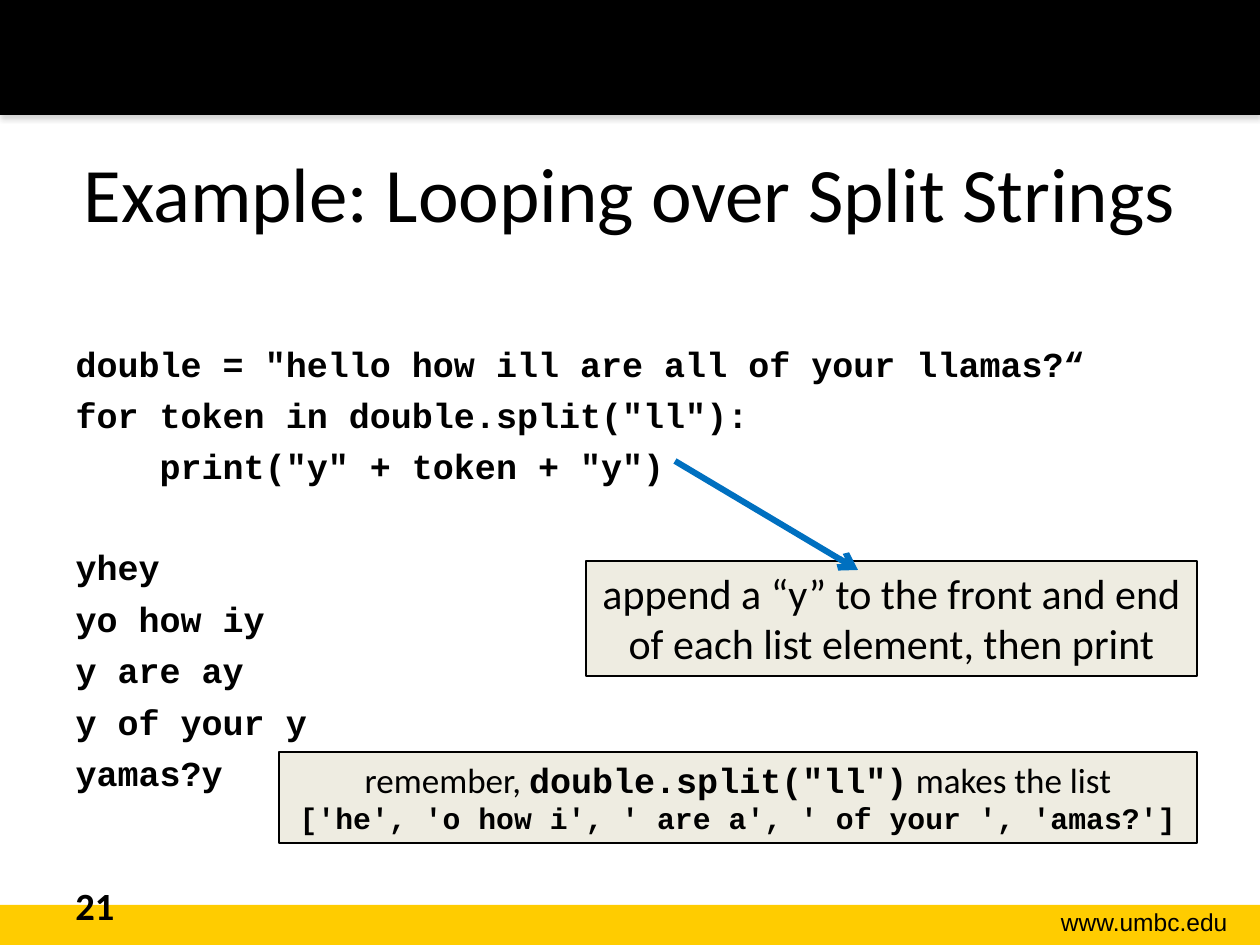
from lxml.etree import SubElement
from pptx import Presentation
from pptx.dml.color import RGBColor
from pptx.enum.shapes import MSO_CONNECTOR, MSO_SHAPE
from pptx.enum.text import MSO_ANCHOR, MSO_AUTO_SIZE, PP_ALIGN
from pptx.oxml.ns import qn
from pptx.util import Emu, Pt

BLACK = RGBColor(0x00, 0x00, 0x00)
GOLD = RGBColor(0xFF, 0xCC, 0x00)
CREAM = RGBColor(0xEE, 0xEC, 0xE1)
BLUE = RGBColor(0x00, 0x70, 0xC0)
SANS, MONO, FOOTER_FONT = "Calibri", "Courier New", "Arial"

# Content
TITLE = "Example: Looping over Split Strings"
CODE = [
    'double = "hello how ill are all of your llamas?“',
    'for token in double.split("ll"):',
    '    print("y" + token + "y")',
]
OUTPUT = ["yhey", "yo how iy", "y are ay", "y of your y", "yamas?y"]
# Each note: place in px, then paragraphs of (text, font, size, bold) runs
NOTES = [
    ((279, 752, 918, 91), [
        [("remember, ", SANS, 20, False),
         ('double.split("ll")', MONO, 20, True),
         (" makes the list", SANS, 20, False)],
        [("['he', 'o how i', ' are a', ' of your ', 'amas?']", MONO, 17, True)],
    ]),
    ((586, 561, 611, 115), [
        [("append a “y” to the front and end of each list element, then print",
          SANS, 24, False)],
    ]),
]
# Each footer: text, place in px, font, size, bold, alignment
FOOTERS = [
    ("www.umbc.edu", (989, 901, 251, 43), FOOTER_FONT, 14, False, PP_ALIGN.RIGHT),
    ("21", (63, 876, 294, 50), SANS, 22, True, PP_ALIGN.LEFT),
]
ARROW = (675, 461, 858, 570)
LINE_GAP, OUTPUT_GAP = Pt(5.4), Pt(33.5)


def px(value):
    return Emu(round(value * 914400 / 126))


def box(place):
    return [px(value) for value in place]


def set_font(font, name, size, bold=False):
    font.name, font.size, font.bold = name, Pt(size), bold
    font.color.rgb = BLACK


def move(placeholder, place):
    (placeholder.left, placeholder.top,
     placeholder.width, placeholder.height) = box(place)
    placeholder.text_frame.auto_size = MSO_AUTO_SIZE.NONE


def add_rect(place, color):
    rect = slide.shapes.add_shape(MSO_SHAPE.RECTANGLE, *box(place))
    rect.shadow.inherit = False
    rect.fill.solid()
    rect.fill.fore_color.rgb = color
    rect.line.fill.background()
    return rect


prs = Presentation()
prs.slide_width, prs.slide_height = px(1260), px(945)
slide = prs.slides.add_slide(prs.slide_layouts[1])

# Bands at bottom and top, the top one with a soft shadow
add_rect((0, 905, 1260, 40), GOLD)
header = add_rect((0, 0, 1260, 115), BLACK)
effects = header._element.spPr.find(qn("a:effectLst"))
shadow = SubElement(effects, qn("a:outerShdw"), blurRad=str(Pt(3.1)),
                    dist=str(Pt(1.8)), dir="5400000", rotWithShape="0")
shade = SubElement(shadow, qn("a:srgbClr"), val="808080")
SubElement(shade, qn("a:alpha"), val="35000")

# Title
title = slide.shapes.title
move(title, (63, 113, 1134, 158))
title.text_frame.text = TITLE
title.text_frame.vertical_anchor = MSO_ANCHOR.MIDDLE
title.text_frame.paragraphs[0].alignment = PP_ALIGN.CENTER
set_font(title.text_frame.paragraphs[0].font, SANS, 44)

# Code and its output
listing = slide.placeholders[1]
move(listing, (63, 271, 1134, 573))
listing.text_frame.margin_top = px(71)
listing.text_frame.text = "\n".join(CODE + OUTPUT)
for index, line in enumerate(listing.text_frame.paragraphs):
    properties = line._p.get_or_add_pPr()
    properties.set("marL", "0")
    properties.set("indent", "0")
    SubElement(properties, qn("a:buNone"))
    line.space_before = (Pt(0) if index == 0 else
                         OUTPUT_GAP if index == len(CODE) else LINE_GAP)
    set_font(line.font, MONO, 20, True)

# Footer texts
for text, place, name, size, bold, alignment in FOOTERS:
    footer = slide.shapes.add_textbox(*box(place)).text_frame
    footer.word_wrap = True
    footer.text = text
    footer.paragraphs[0].alignment = alignment
    set_font(footer.paragraphs[0].font, name, size, bold)

# Notes
for place, paragraphs in NOTES:
    note = add_rect(place, CREAM)
    note.line.color.rgb = BLACK
    note.line.width = Pt(0.75)
    frame = note.text_frame
    frame.word_wrap = True
    frame.vertical_anchor = MSO_ANCHOR.TOP
    for index, runs in enumerate(paragraphs):
        paragraph = frame.add_paragraph() if index else frame.paragraphs[0]
        paragraph.alignment = PP_ALIGN.CENTER
        for text, *style in runs:
            run = paragraph.add_run()
            run.text = text
            set_font(run.font if len(runs) > 1 else paragraph.font, *style)

# Arrow from the print call to its note
arrow = slide.shapes.add_connector(MSO_CONNECTOR.STRAIGHT, *box(ARROW))
arrow.line.color.rgb = BLUE
arrow.line.width = Pt(3.5)
SubElement(arrow.line._get_or_add_ln(), qn("a:tailEnd"), type="arrow")
SubElement(arrow._element.spPr, qn("a:effectLst"))

prs.save("out.pptx")
